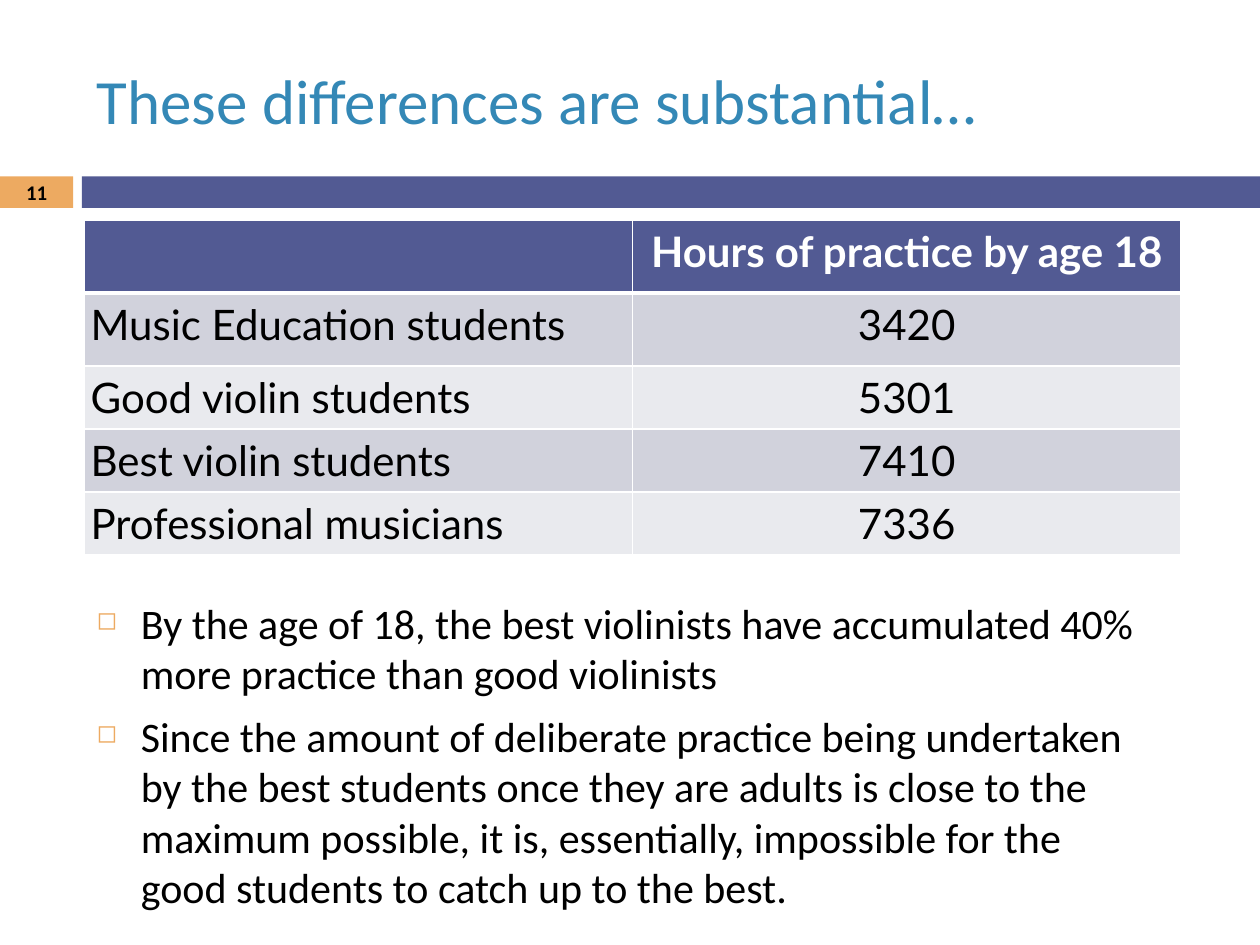
import pptx
import pptx.dml.color
import pptx.enum.shapes
import pptx.enum.text
import pptx.oxml
import pptx.oxml.ns
import pptx.util
from pptx.util import Pt

RGBColor = pptx.dml.color.RGBColor
ALIGN = pptx.enum.text.PP_ALIGN
ANCHOR = pptx.enum.text.MSO_ANCHOR

WHITE = RGBColor(0xFF, 0xFF, 0xFF)
BLACK = RGBColor(0, 0, 0)
INDIGO = RGBColor(0x52, 0x5A, 0x93)
ORANGE = RGBColor(0xED, 0xAA, 0x61)
BLUE = RGBColor(0x34, 0x88, 0xB6)
BAND_DARK = RGBColor(0xD1, 0xD2, 0xDC)
BAND_LIGHT = RGBColor(0xE9, 0xEA, 0xEE)

PRACTICE_ROWS = [
    ("", "Hours of practice by age 18"),
    ("Music Education students", "3420"),
    ("Good violin students", "5301"),
    ("Best violin students", "7410"),
    ("Professional musicians", "7336"),
]
ROW_HEIGHTS = [41.8, 41.8, 36, 36, 36]
POINTS = [
    "By the age of 18, the best violinists have accumulated 40% "
    "more practice than good violinists",
    "Since the amount of deliberate practice being undertaken by the best "
    "students once they are adults is close to the maximum possible, it is, "
    "essentially, impossible for the good students to catch up to the best.",
]


def write(para, text, size=24, font="Calibri", color=BLACK, bold=False,
          align=ALIGN.LEFT):
    para.alignment = align
    span = para.add_run()
    span.text = text
    span.font.size = Pt(size)
    span.font.name = font
    span.font.color.rgb = color
    span.font.bold = bold


def add_xml(parent, xml):
    """Append a DrawingML element written with the a: prefix."""
    name, rest = xml[1:].split(" ", 1)
    namespace = pptx.oxml.ns.nsdecls("a")
    parent.append(pptx.oxml.parse_xml(f"<{name} {namespace} {rest}"))


def add_title(page, left, top, width, height):
    title = page.shapes.title
    title.left, title.top = Pt(left), Pt(top)
    title.width, title.height = Pt(width), Pt(height)
    title.text_frame.vertical_anchor = ANCHOR.MIDDLE
    write(title.text_frame.paragraphs[0], "These differences are substantial…",
          size=36, color=BLUE)


def add_band(page, left, top, width, height, number_width=41.8, gap=5):
    """Orange page-number block followed by the indigo rule."""
    bar_left = left + number_width + gap
    blocks = [(left, number_width, ORANGE),
              (bar_left, left + width - bar_left, INDIGO)]
    for x, block_width, color in blocks:
        block = page.shapes.add_shape(
            pptx.enum.shapes.MSO_SHAPE.RECTANGLE,
            Pt(x), Pt(top), Pt(block_width), Pt(height))
        block.shadow.inherit = False
        block.fill.solid()
        block.fill.fore_color.rgb = color
        block.line.fill.background()

    # Page number
    box = page.shapes.add_textbox(Pt(left), Pt(top - 0.7),
                                  Pt(number_width), Pt(height + 1.4))
    frame = box.text_frame
    frame.word_wrap = True
    frame.margin_top = frame.margin_bottom = 0
    frame.vertical_anchor = ANCHOR.MIDDLE
    write(frame.paragraphs[0], "11", size=11.9, bold=True, align=ALIGN.CENTER)


def format_cell(cell, fill, bottom_width):
    properties = cell._tc.get_or_add_tcPr()
    widths = {"lnL": 1, "lnR": 1, "lnT": 1, "lnB": bottom_width}
    for side, line_width in widths.items():
        add_xml(properties, f'<a:{side} w="{Pt(line_width)}"><a:solidFill>'
                f'<a:srgbClr val="{WHITE}"/></a:solidFill></a:{side}>')
    cell.fill.solid()
    cell.fill.fore_color.rgb = fill
    cell.margin_left = cell.margin_right = Pt(3.6)
    cell.margin_top = cell.margin_bottom = Pt(3.6)


def add_practice_table(page, left, top, width):
    table = page.shapes.add_table(
        len(PRACTICE_ROWS), 2, Pt(left), Pt(top),
        Pt(width), Pt(sum(ROW_HEIGHTS))).table
    for column in table.columns:
        column.width = Pt(width / 2)
    for r, (values, height) in enumerate(zip(PRACTICE_ROWS, ROW_HEIGHTS)):
        table.rows[r].height = Pt(height)
        header = r == 0
        fill = INDIGO if header else BAND_DARK if r % 2 else BAND_LIGHT
        for c, value in enumerate(values):
            cell = table.cell(r, c)
            format_cell(cell, fill, bottom_width=3 if header else 1)
            if value:
                write(cell.text_frame.paragraphs[0], value, font="Lato",
                      color=WHITE if header else BLACK, bold=header,
                      align=ALIGN.CENTER if c else ALIGN.LEFT)


def add_points(page, left, top, width, height, indent=25.2):
    frame = page.shapes.add_textbox(
        Pt(left), Pt(top), Pt(width), Pt(height)).text_frame
    frame.word_wrap = True
    for i, text in enumerate(POINTS):
        para = frame.add_paragraph() if i else frame.paragraphs[0]
        write(para, text)
        para.space_before = Pt(7)
        # Hanging orange square bullet
        properties = para._p.get_or_add_pPr()
        properties.set("marL", str(Pt(indent)))
        properties.set("indent", str(-Pt(indent)))
        add_xml(properties, f'<a:buClr ><a:srgbClr val="{ORANGE}"/></a:buClr>')
        add_xml(properties, '<a:buSzPct val="60000"/>')
        add_xml(properties, '<a:buChar char="◻"/>')


def main():
    deck = pptx.Presentation()
    deck.slide_width, deck.slide_height = Pt(720), Pt(540)
    page = deck.slides.add_slide(deck.slide_layouts[5])
    add_band(page, 0, 100.8, 720, 18)
    add_title(page, 48.2, 18, 642.2, 77.8)
    add_practice_table(page, 48.2, 125.6, 626.6)
    add_points(page, 48.2, 337.7, 618.5, 202.3)
    deck.save("out.pptx")


if __name__ == "__main__":
    main()
